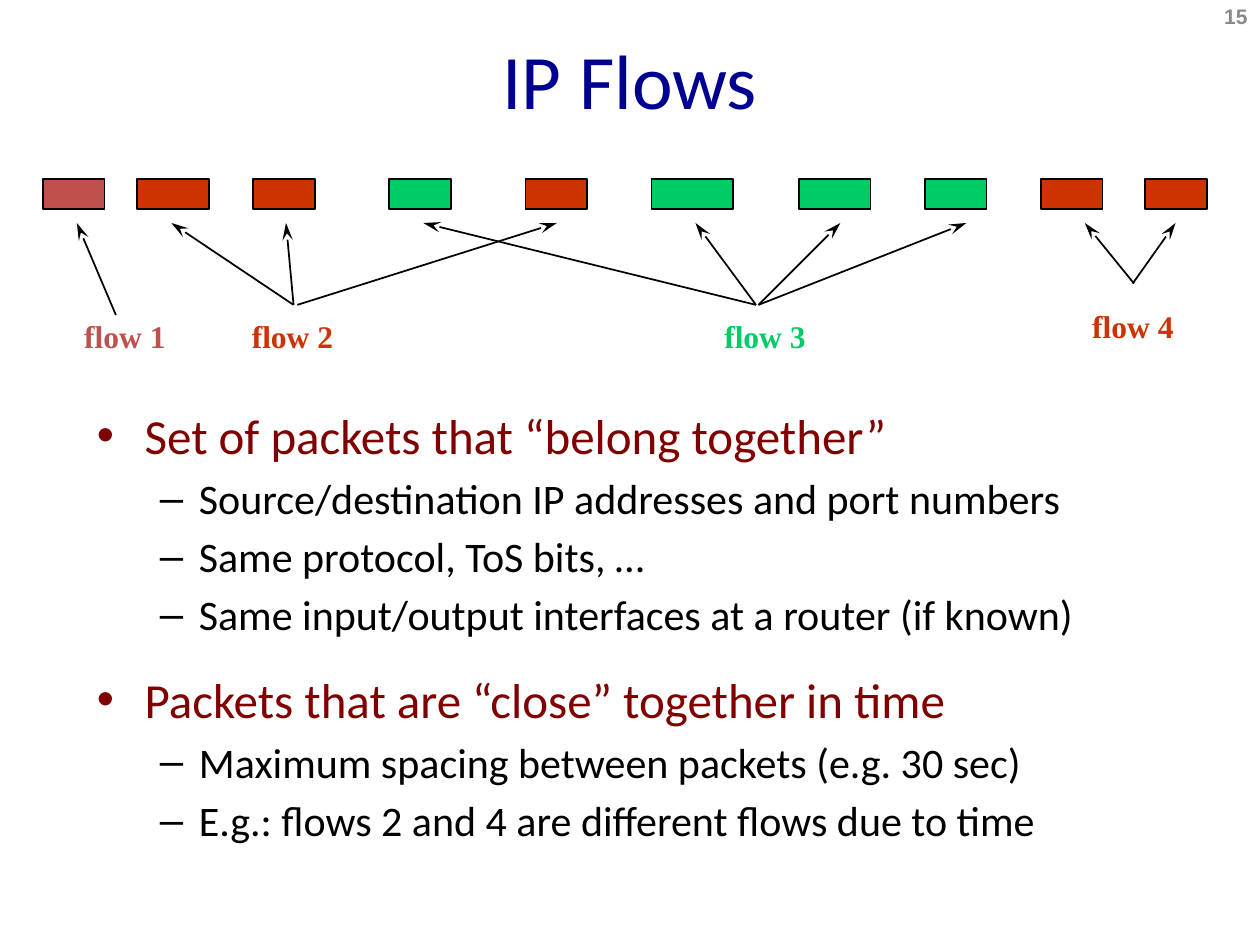
from dataclasses import dataclass

from lxml import etree
from pptx import Presentation
from pptx.dml.color import RGBColor
from pptx.enum.shapes import MSO_CONNECTOR, MSO_SHAPE
from pptx.enum.text import MSO_ANCHOR, PP_ALIGN
from pptx.oxml.ns import qn
from pptx.slide import Slide
from pptx.text.text import Font, TextFrame
from pptx.util import Inches, Pt

RECTANGLE = MSO_SHAPE.RECTANGLE
STRAIGHT = MSO_CONNECTOR.STRAIGHT
TOP, MIDDLE = MSO_ANCHOR.TOP, MSO_ANCHOR.MIDDLE
LEFT, CENTER, RIGHT = PP_ALIGN.LEFT, PP_ALIGN.CENTER, PP_ALIGN.RIGHT

BLACK, RED, GREEN, ROSE = "000000", "CC3300", "00CC66", "C0504D"
NAVY, MAROON, GRAY = "000090", "800000", "898989"
PACKET_TOP, PACKET_HEIGHT, TIP_TOP = 1.42, 0.24, 1.77


@dataclass(frozen=True)
class Flow:
    """A labelled flow: packets are (left, width), arrows are (tip x, foot x)."""

    label: str
    color: str
    label_left: float
    label_top: float
    foot_top: float
    packets: tuple[tuple[float, float], ...]
    arrows: tuple[tuple[float, float], ...]


@dataclass(frozen=True)
class Level:
    """The look of one bullet level."""

    bullet: str
    size: float
    color: str
    margin: float
    hanging: float
    space_before: float


@dataclass(frozen=True)
class Topic:
    """A main bullet with its details."""

    heading: str
    details: tuple[str, ...]


FLOWS = (
    Flow("flow 1", ROSE, 0.57, 2.47, 2.5, ((0.34, 0.49),), ((0.61, 0.92),)),
    Flow("flow 2", RED, 1.9, 2.47, 2.42,
         ((1.09, 0.57), (2.01, 0.49), (4.17, 0.49)),
         ((1.36, 2.33), (2.27, 2.33), (4.42, 2.36))),
    Flow("flow 3", GREEN, 5.65, 2.47, 2.42,
         ((3.09, 0.49), (5.17, 0.65), (6.34, 0.57), (7.34, 0.49)),
         ((3.36, 6), (5.52, 6), (6.67, 6.02), (7.67, 6.02))),
    Flow("flow 4", RED, 8.57, 2.39, 2.25,
         ((8.26, 0.49), (9.09, 0.49)),
         ((8.61, 9), (9.33, 8.99))),
)
HEADING = Level("•", 28, MAROON, 0.38, 0.38, 5.2)
DETAIL = Level("–", 24, BLACK, 0.81, 0.31, 4.5)
TOPICS = (
    Topic("Set of packets that “belong together”",
          ("Source/destination IP addresses and port numbers",
           "Same protocol, ToS bits, …",
           "Same input/output interfaces at a router (if known)")),
    Topic("Packets that are “close” together in time",
          ("Maximum spacing between packets (e.g. 30 sec)",
           "E.g.: flows 2 and 4 are different flows due to time")),
)


def rgb(color: str) -> RGBColor:
    """Turn a hex string into a colour."""
    return RGBColor.from_string(color)


def set_font(font: Font, name: str, size: float, color: str, bold: bool = False) -> None:
    """Set the face, size, colour and weight of a font."""
    font.name, font.size, font.bold = name, Pt(size), bold
    font.color.rgb = rgb(color)


def add_box(page: Slide, left: float, top: float, width: float, height: float,
            anchor: MSO_ANCHOR = TOP, wrap: bool = True) -> TextFrame:
    """Add an empty text box and return its frame."""
    frame = page.shapes.add_textbox(
        Inches(left), Inches(top), Inches(width), Inches(height)).text_frame
    frame.word_wrap, frame.vertical_anchor = wrap, anchor
    return frame


def write_line(frame: TextFrame, text: str, name: str, size: float, color: str,
               bold: bool = False, align: PP_ALIGN = LEFT) -> None:
    """Fill a frame with one line of text."""
    para = frame.paragraphs[0]
    para.text, para.alignment = text, align
    set_font(para.font, name, size, color, bold)


def add_packet(page: Slide, left: float, width: float, color: str) -> None:
    """Draw one packet on the timeline."""
    packet = page.shapes.add_shape(RECTANGLE, Inches(left), Inches(PACKET_TOP),
                                   Inches(width), Inches(PACKET_HEIGHT))
    packet.shadow.inherit = False
    packet.fill.solid()
    packet.fill.fore_color.rgb = rgb(color)
    packet.line.color.rgb = rgb(BLACK)
    packet.line.width = Pt(1)


def add_arrow(page: Slide, tip: float, foot: float, foot_top: float) -> None:
    """Draw an arrow pointing up at a packet."""
    arrow = page.shapes.add_connector(STRAIGHT, Inches(tip), Inches(TIP_TOP),
                                      Inches(foot), Inches(foot_top))
    arrow.line.color.rgb = rgb(BLACK)
    arrow.line.width = Pt(1)
    etree.SubElement(arrow.line._get_or_add_ln(), qn("a:headEnd"),
                     type="stealth", w="med", len="lg")
    etree.SubElement(arrow._element.spPr, qn("a:effectLst"))


def add_flow(page: Slide, flow: Flow) -> None:
    """Draw the packets, arrows and label of a flow."""
    for left, width in flow.packets:
        add_packet(page, left, width, flow.color)
    for tip, foot in flow.arrows:
        add_arrow(page, tip, foot, flow.foot_top)
    frame = add_box(page, flow.label_left, flow.label_top, 0.85, 0.4, wrap=False)
    write_line(frame, flow.label, "Times New Roman", 18, flow.color, bold=True)


def add_bullet(frame: TextFrame, text: str, level: Level, space_after: float = 0) -> None:
    """Append a bulleted paragraph, using the first one while it is empty."""
    para = frame.paragraphs[0] if not frame.text else frame.add_paragraph()
    para.text = text
    para.space_before, para.space_after = Pt(level.space_before), Pt(space_after)
    set_font(para.font, "Calibri", level.size, level.color)
    properties = para._p.get_or_add_pPr()
    properties.set("marL", str(Inches(level.margin)))
    properties.set("indent", str(-Inches(level.hanging)))
    face = etree.Element(qn("a:buFont"), typeface="Arial")
    mark = etree.Element(qn("a:buChar"), char=level.bullet)
    defaults = properties.find(qn("a:defRPr"))
    defaults.addprevious(face)
    defaults.addprevious(mark)


def add_topics(page: Slide) -> None:
    """Write the bulleted topics, with a gap between one and the next."""
    frame = add_box(page, 0.67, 3.17, 9.25, 4.08)
    for topic in TOPICS:
        add_bullet(frame, topic.heading, HEADING)
        for detail in topic.details:
            ends_topic = detail == topic.details[-1] and topic != TOPICS[-1]
            add_bullet(frame, detail, DETAIL, 12 if ends_topic else 0)


def main() -> None:
    """Build and save the slide."""
    deck = Presentation()
    deck.slide_width, deck.slide_height = Inches(10), Inches(7.5)
    page = deck.slides.add_slide(deck.slide_layouts[6])
    for flow in FLOWS:
        add_flow(page, flow)
    title = add_box(page, 0.5, 0, 9, 1.25, MIDDLE)
    write_line(title, "IP Flows", "Calibri", 44, NAVY, align=CENTER)
    add_topics(page)
    number = add_box(page, 7.67, -0.07, 2.33, 0.4, MIDDLE)
    write_line(number, "15", "Arial", 12, GRAY, bold=True, align=RIGHT)
    deck.save("out.pptx")


if __name__ == "__main__":
    main()
